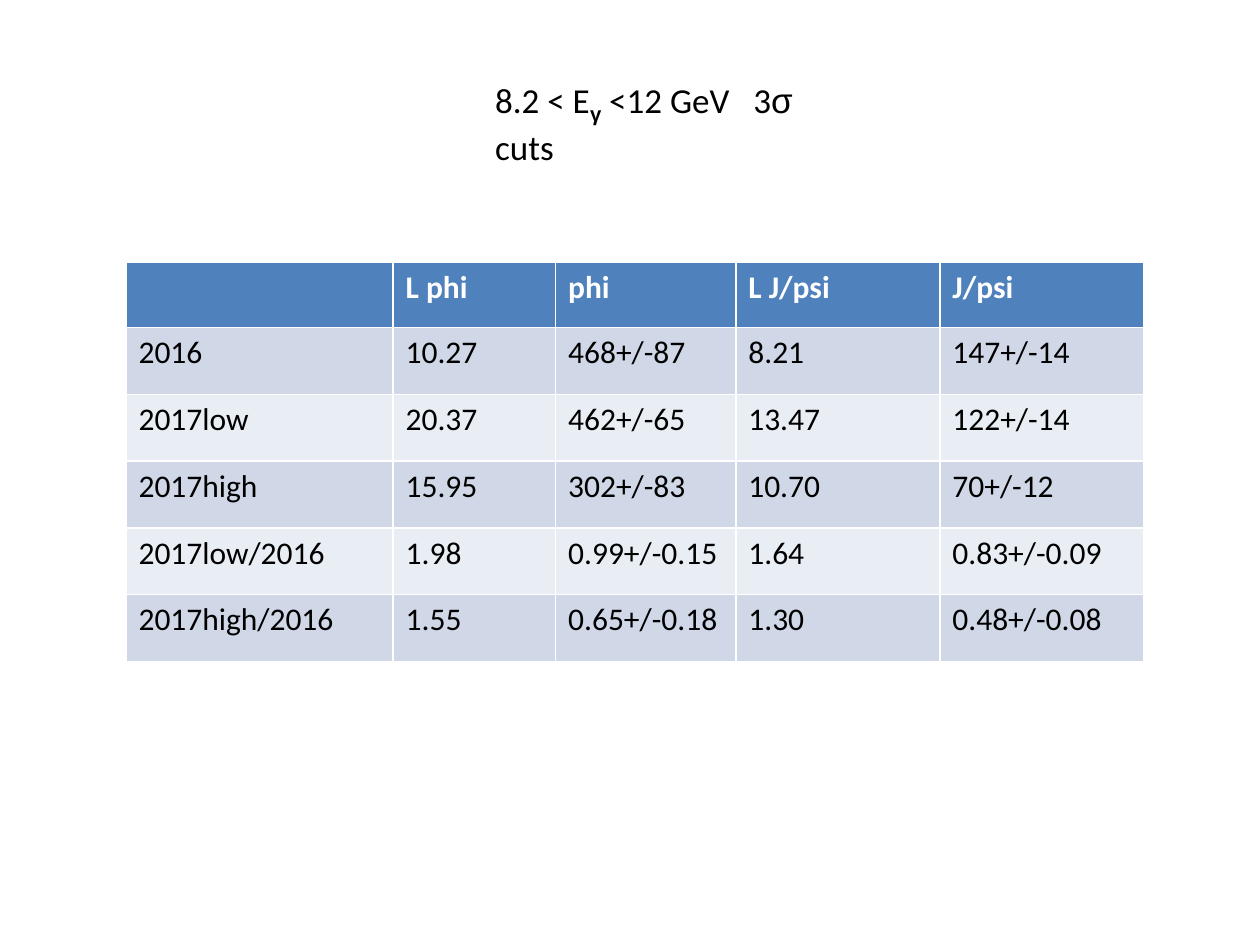
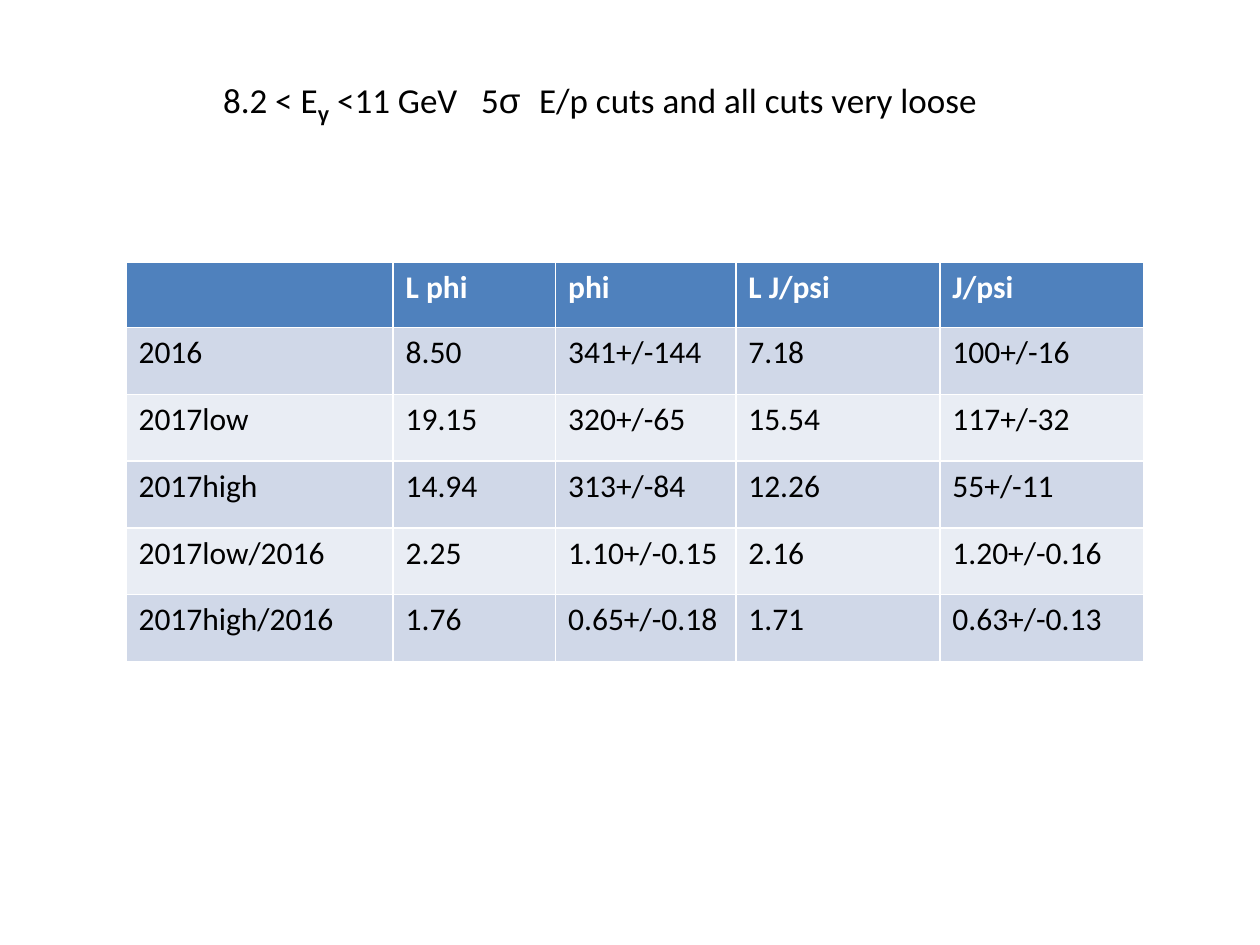
"""Build two slides comparing phi and J/psi yields under tight and loose cuts."""
from pptx import Presentation
from pptx.dml.color import RGBColor
from pptx.enum.text import MSO_ANCHOR, MSO_AUTO_SIZE, PP_ALIGN
from pptx.util import Inches, Pt

LEFT = PP_ALIGN.LEFT
TOP = MSO_ANCHOR.TOP
NO_AUTOFIT = MSO_AUTO_SIZE.NONE
TITLE_ONLY = 5

COLORS = {
    "header": "4F81BD",
    "odd_row": "D0D8E8",
    "even_row": "E9EDF4",
    "header_text": "FFFFFF",
    "text": "000000",
}
BODY_FONT = "Calibri"
GREEK_FONT = "Arial"
TITLE_SIZE = 20
TABLE_SIZE = 18
COLUMN_WIDTHS = [2.12, 1.29, 1.43, 1.62, 1.62]
HEADER_HEIGHT = 0.52
ROW_HEIGHT = 0.53
HEADERS = ["", "L phi", "phi", "L J/psi", "J/psi"]
ROW_LABELS = ["2016", "2017low", "2017high", "2017low/2016", "2017high/2016"]

SLIDES = [
    {
        "left": 3.83, "width": 2.92, "height": 0.77,
        "energy": " <12 GeV", "sigmas": "3", "sigma_gap": 0, "cuts": "cuts",
        "values": [
            ["10.27", "468+/-87", "8.21", "147+/-14"],
            ["20.37", "462+/-65", "13.47", "122+/-14"],
            ["15.95", "302+/-83", "10.70", "70+/-12"],
            ["1.98", "0.99+/-0.15", "1.64", "0.83+/-0.09"],
            ["1.55", "0.65+/-0.18", "1.30", "0.48+/-0.08"],
        ],
    },
    {
        "left": 1.67, "width": 6.67, "height": 0.44,
        "energy": " <11 GeV", "sigmas": "5", "sigma_gap": 6,
        "cuts": "E/p cuts and all cuts very loose",
        "values": [
            ["8.50", "341+/-144", "7.18", "100+/-16"],
            ["19.15", "320+/-65", "15.54", "117+/-32"],
            ["14.94", "313+/-84", "12.26", "55+/-11"],
            ["2.25", "1.10+/-0.15", "2.16", "1.20+/-0.16"],
            ["1.76", "0.65+/-0.18", "1.71", "0.63+/-0.13"],
        ],
    },
]


def add_run(para, text, size, color="text", font=BODY_FONT, bold=False):
    span = para.add_run()
    span.text = text
    span.font.name = font
    span.font.size = Pt(size)
    span.font.bold = bold
    span.font.color.rgb = RGBColor.from_string(COLORS[color])
    return span


def add_gap(para, extra_points):
    span = add_run(para, " ", TITLE_SIZE)
    span.font._element.set("spc", str(extra_points * 100))


deck = Presentation()
deck.slide_width = Inches(10)
deck.slide_height = Inches(7.5)

for content in SLIDES:
    page = deck.slides.add_slide(deck.slide_layouts[TITLE_ONLY])

    title = page.shapes.title
    title.left, title.top = Inches(content["left"]), Inches(0.57)
    title.width, title.height = Inches(content["width"]), Inches(content["height"])
    frame = title.text_frame
    frame.word_wrap = True
    frame.auto_size = NO_AUTOFIT
    frame.vertical_anchor = TOP
    para = frame.paragraphs[0]
    para.alignment = LEFT
    add_run(para, "8.2 < E", TITLE_SIZE)
    gamma = add_run(para, "γ", TITLE_SIZE, font=GREEK_FONT, bold=True)
    gamma.font._element.set("baseline", "-25000")
    add_run(para, content["energy"], TITLE_SIZE)
    add_gap(para, 9)
    add_run(para, content["sigmas"], TITLE_SIZE)
    add_run(para, "σ", TITLE_SIZE, font=GREEK_FONT)
    add_gap(para, content["sigma_gap"])
    add_run(para, content["cuts"], TITLE_SIZE)

    rows = [HEADERS] + [[label] + values for label, values in zip(ROW_LABELS, content["values"])]
    heights = [HEADER_HEIGHT] + [ROW_HEIGHT] * len(ROW_LABELS)
    table = page.shapes.add_table(
        len(rows), len(HEADERS), Inches(1), Inches(2.08),
        Inches(sum(COLUMN_WIDTHS)), Inches(sum(heights)),
    ).table
    for column, width in zip(table.columns, COLUMN_WIDTHS):
        column.width = Inches(width)
    for row_index, (texts, height) in enumerate(zip(rows, heights)):
        table.rows[row_index].height = Inches(height)
        is_header = row_index == 0
        band = "header" if is_header else "odd_row" if row_index % 2 else "even_row"
        for column_index, text in enumerate(texts):
            cell = table.cell(row_index, column_index)
            cell.fill.solid()
            cell.fill.fore_color.rgb = RGBColor.from_string(COLORS[band])
            if text:
                add_run(cell.text_frame.paragraphs[0], text, TABLE_SIZE,
                        "header_text" if is_header else "text", bold=is_header)

deck.save("out.pptx")
